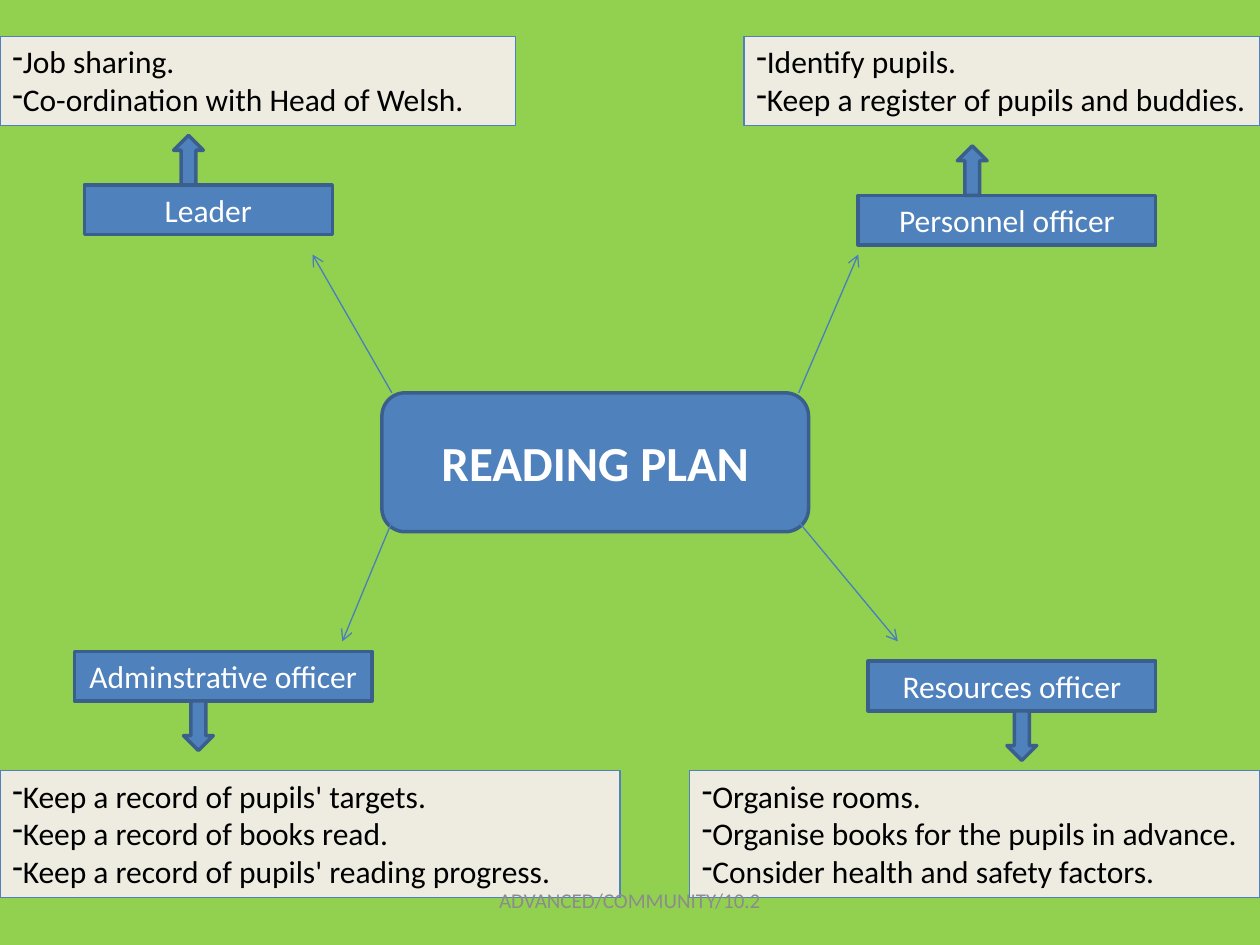
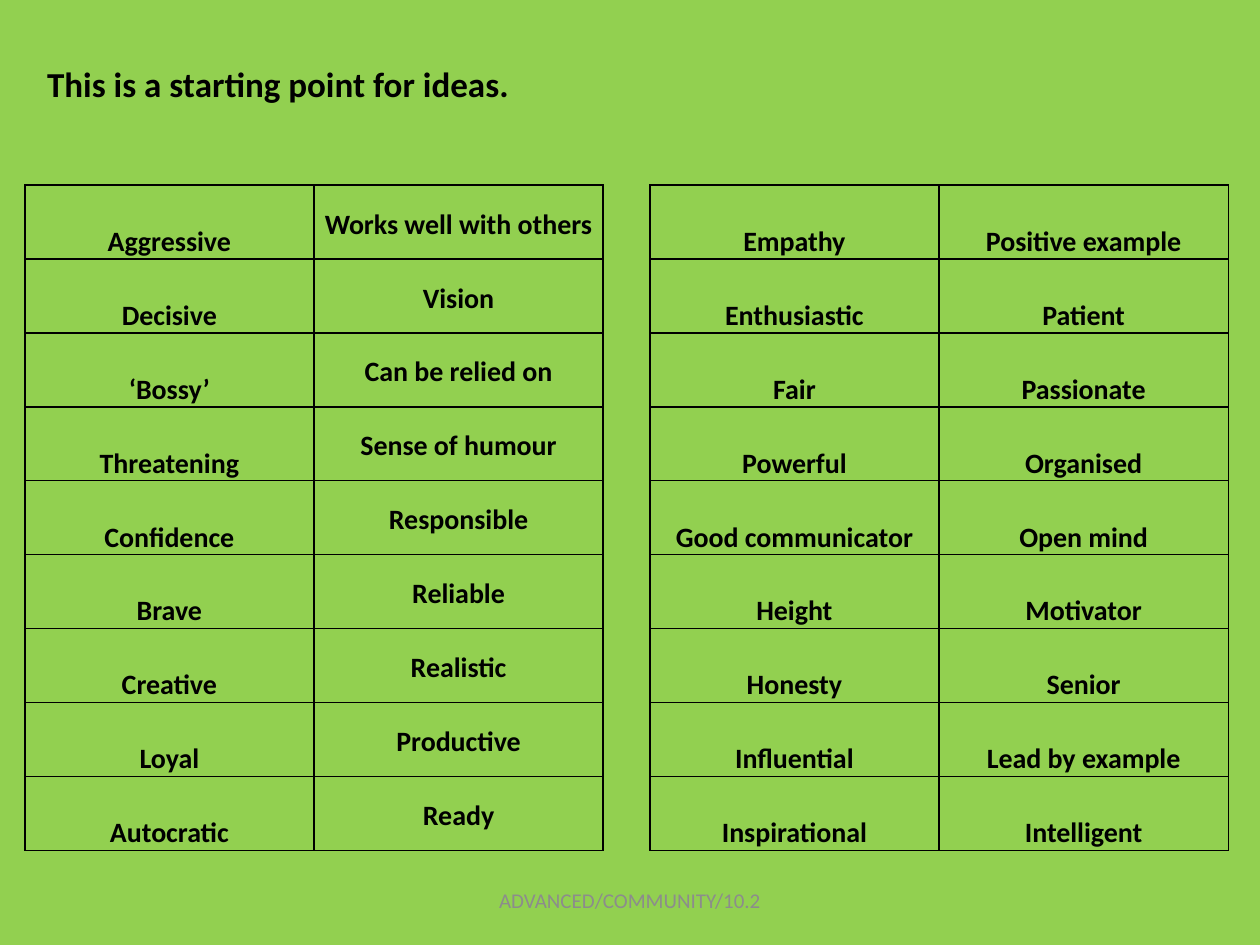
from lxml.etree import SubElement
from pptx import Presentation
from pptx.dml.color import RGBColor
from pptx.enum.shapes import MSO_CONNECTOR, MSO_SHAPE
from pptx.enum.text import MSO_ANCHOR, PP_ALIGN
from pptx.oxml.ns import qn
from pptx.util import Cm, Pt

FONT = "Calibri"
GREEN = RGBColor(0x92, 0xD0, 0x50)
BLUE = RGBColor(0x4F, 0x81, 0xBD)
NAVY = RGBColor(0x3A, 0x5F, 0x8C)
STEEL = RGBColor(0x4B, 0x7E, 0xBC)
CREAM = RGBColor(0xEE, 0xEC, 0xE1)
GREY = RGBColor(0x8C, 0x8C, 0x8C)
WHITE = RGBColor(0xFF, 0xFF, 0xFF)
BLACK = RGBColor(0, 0, 0)

WIDE, HIGH = 25.4, 19.05
FOOTER = "ADVANCED/COMMUNITY/10.2"
PLAN = "READING PLAN"
HUB = (7.7, 7.92, 8.6, 2.8)
HEADING = "This is a starting point for ideas."

ROLES = [
    dict(name="Leader", box=(1.7, 3.73, 5), arrow=3.5, up=True, right=False,
         line=(7.9, 7.92, 6.3, 5.13), width=10.4,
         duties=["Job sharing.", "Co-ordination with Head of Welsh."]),
    dict(name="Personnel officer", box=(17.3, 3.94, 6), arrow=19.3, up=True, right=True,
         line=(16.1, 7.92, 17.3, 5.13), width=10.4,
         duties=["Identify pupils.", "Keep a register of pupils and buddies."]),
    dict(name="Adminstrative officer", box=(1.5, 13.13, 6), arrow=3.7, up=False, right=False,
         line=(7.9, 10.52, 6.9, 12.93), width=12.5,
         duties=["Keep a record of pupils' targets.", "Keep a record of books read.",
                 "Keep a record of pupils' reading progress."]),
    dict(name="Resources officer", box=(17.5, 13.33, 5.8), arrow=20.3, up=False, right=True,
         line=(16.1, 10.52, 18.1, 12.93), width=11.5,
         duties=["Organise rooms.", "Organise books for the pupils in advance.",
                 "Consider health and safety factors."]),
]

LEFT = [
    ("Aggressive", "Works well with others"),
    ("Decisive", "Vision"),
    ("‘Bossy’", "Can be relied on"),
    ("Threatening", "Sense of humour"),
    ("Confidence", "Responsible"),
    ("Brave", "Reliable"),
    ("Creative", "Realistic"),
    ("Loyal", "Productive"),
    ("Autocratic", "Ready"),
]
RIGHT = [
    ("Empathy", "Positive example"),
    ("Enthusiastic", "Patient"),
    ("Fair", "Passionate"),
    ("Powerful", "Organised"),
    ("Good communicator", "Open mind"),
    ("Height", "Motivator"),
    ("Honesty", "Senior"),
    ("Influential", "Lead by example"),
    ("Inspirational", "Intelligent"),
]
LOW, MID = MSO_ANCHOR.BOTTOM, MSO_ANCHOR.MIDDLE
TABLES = [(0.5, LEFT, (LOW, MID)), (13.1, RIGHT, (LOW, LOW))]


def write(frame, lines, size, color, bold=False, align=PP_ALIGN.LEFT):
    frame.text = "\n".join(lines)
    frame.word_wrap = True
    for para in frame.paragraphs:
        para.alignment = align
        font = para.font
        font.name, font.size, font.bold = FONT, Pt(size), bold
        font.color.rgb = color


def add_shape(slide, kind, box, fill=BLUE, edge=NAVY, weight=2):
    shape = slide.shapes.add_shape(kind, *map(Cm, box))
    shape.shadow.inherit = False
    shape.fill.solid()
    shape.fill.fore_color.rgb = fill
    shape.line.color.rgb = edge
    shape.line.width = Pt(weight)
    return shape


def add_label(slide, box, text, size, color, bold=False, align=PP_ALIGN.CENTER):
    label = slide.shapes.add_textbox(*map(Cm, box))
    write(label.text_frame, [text], size, color, bold, align)
    label.text_frame.vertical_anchor = MID


def add_line(slide, ends):
    line = slide.shapes.add_connector(MSO_CONNECTOR.STRAIGHT, *map(Cm, ends))
    line.line.color.rgb = STEEL
    line.line.width = Pt(0.75)
    SubElement(line.line._get_or_add_ln(), qn("a:tailEnd"), type="arrow")
    SubElement(line._element.spPr, qn("a:effectLst"))


def add_note(slide, role):
    lines, width = role["duties"], role["width"]
    top = 0.73 if role["up"] else 15.53
    left = WIDE - width if role["right"] else 0
    height = 0.26 + 0.77 * len(lines)
    note = add_shape(slide, MSO_SHAPE.RECTANGLE, (left, top, width, height), CREAM, BLUE, 0.75)
    note.text_frame.vertical_anchor = MSO_ANCHOR.TOP
    write(note.text_frame, lines, 18, BLACK)
    for para in note.text_frame.paragraphs:
        props = para._p.get_or_add_pPr()
        props.set("marL", "0")
        props.set("indent", "0")
        mark = props.makeelement(qn("a:buChar"), {"char": "-"})
        props.insert_element_before(mark, "a:tabLst", "a:defRPr", "a:extLst")


def add_role(slide, role):
    left, top, width = role["box"]
    badge = add_shape(slide, MSO_SHAPE.RECTANGLE, (left, top, width, 1))
    write(badge.text_frame, [role["name"]], 18, WHITE, align=PP_ALIGN.CENTER)
    add_line(slide, role["line"])
    add_note(slide, role)
    kind, shift = (MSO_SHAPE.UP_ARROW, -1) if role["up"] else (MSO_SHAPE.DOWN_ARROW, 1)
    add_shape(slide, kind, (role["arrow"], top + shift, 0.6, 1))


def add_grid(slide, left, rows, anchors):
    box = (left, 3.73, 11.66, 1.49 * len(rows))
    table = slide.shapes.add_table(len(rows), 2, *map(Cm, box)).table
    table.first_row = table.horz_banding = False
    for r, row in enumerate(rows):
        for c, word in enumerate(row):
            cell = table.cell(r, c)
            cell.margin_left = cell.margin_right = Cm(0.13)
            cell.margin_top = cell.margin_bottom = 0
            cell.vertical_anchor = anchors[c]
            write(cell.text_frame, [word], 16, BLACK, True, PP_ALIGN.CENTER)
            cell.text_frame.paragraphs[0].line_spacing = 1.15
            props = cell._tc.get_or_add_tcPr()
            for side in ("lnL", "lnR", "lnT", "lnB"):
                edge = SubElement(props, qn("a:" + side), w=str(Pt(1)))
                fill = SubElement(edge, qn("a:solidFill"))
                SubElement(fill, qn("a:srgbClr"), val=str(BLACK))
            cell.fill.background()


def new_slide(deck):
    slide = deck.slides.add_slide(deck.slide_layouts[6])
    slide.background.fill.solid()
    slide.background.fill.fore_color.rgb = GREEN
    return slide


def add_footer(slide):
    add_label(slide, (8.68, 17.65, 8.04, 1.01), FOOTER, 12, GREY)


def main():
    deck = Presentation()
    deck.slide_width, deck.slide_height = Cm(WIDE), Cm(HIGH)

    plan = new_slide(deck)
    hub = add_shape(plan, MSO_SHAPE.ROUNDED_RECTANGLE, HUB)
    write(hub.text_frame, [PLAN], 28, WHITE, True, PP_ALIGN.CENTER)
    for role in ROLES:
        add_role(plan, role)
    add_footer(plan)

    ideas = new_slide(deck)
    for left, rows, anchors in TABLES:
        add_grid(ideas, left, rows, anchors)
    add_label(ideas, (0.7, 1.12, 12, 1.11), HEADING, 20, BLACK, True, PP_ALIGN.LEFT)
    add_footer(ideas)

    deck.save("out.pptx")


if __name__ == "__main__":
    main()
